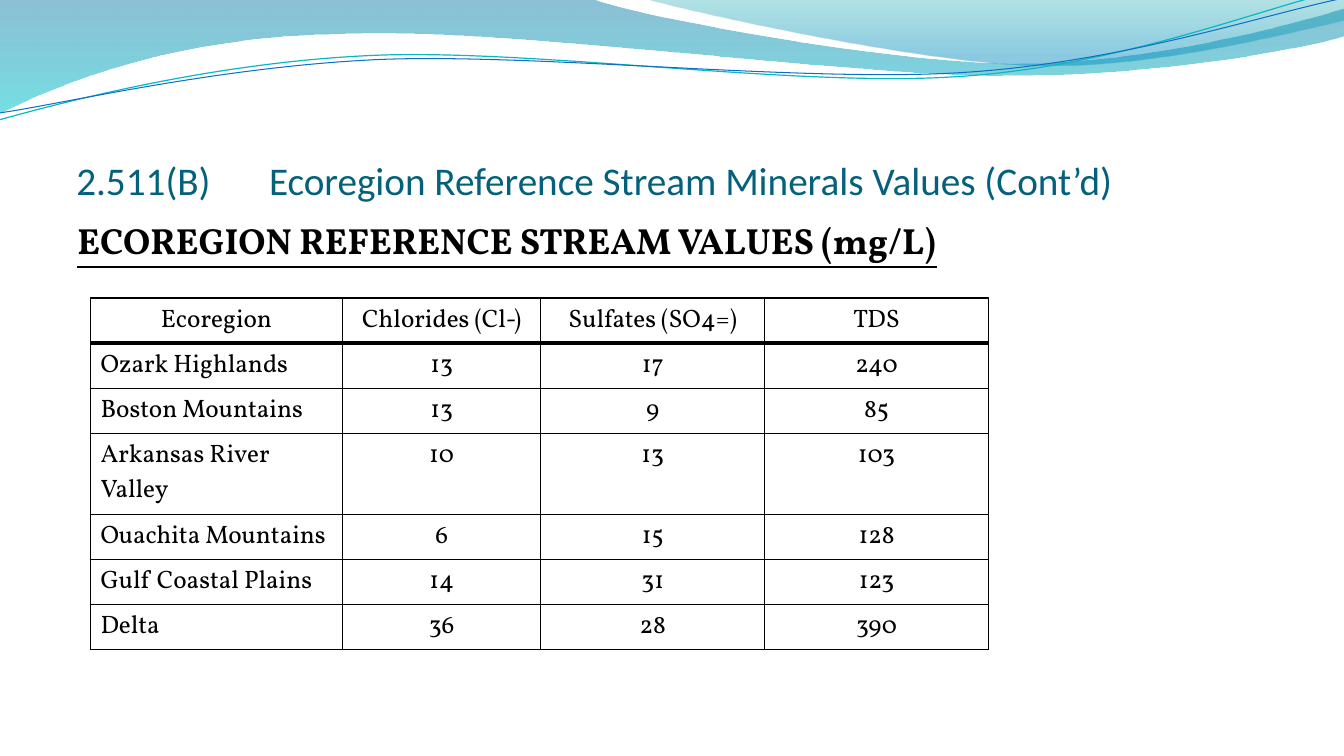
"""Build the slide of ecoregion reference stream mineral values."""
from lxml import etree
from pptx import Presentation
from pptx import util as u
from pptx.dml.color import RGBColor
from pptx.enum import text
from pptx.oxml.ns import qn

BLACK = RGBColor(0x00, 0x00, 0x00)
TITLE_BLUE = RGBColor(0x04, 0x61, 0x7B)
DEEP_BLUE = RGBColor(0x00, 0x74, 0xA1)
CYAN = RGBColor(0x00, 0xC6, 0xCF)
TEAL = RGBColor(0x00, 0xA1, 0xA9)
SKY = RGBColor(0x00, 0x8B, 0xBF)
LINE_TEAL = RGBColor(0x0A, 0xB8, 0xBF)
LINE_BLUE = RGBColor(0x0F, 0x6F, 0xC6)
UNIT = u.Cm(2.54) / 1000


def add_wave(s, segments, close):
    """Draw a freeform from points and cubic curves given in inches."""
    points = [(round(x * 1000), round(y * 1000))
              for seg in segments for x, y in zip(seg[::2], seg[1::2])]
    fb = s.shapes.build_freeform(*points[0], scale=UNIT)
    fb.add_line_segments(points[1:], close=close)
    sp = fb.convert_to_shape()
    sp.shadow.inherit = False
    steps = iter(list(sp.element.iter(qn("a:lnTo"))))
    for seg in segments[1:]:
        step = next(steps)
        if len(seg) == 6:
            curve = etree.Element(qn("a:cubicBezTo"))
            step.addprevious(curve)
            for part in (step, next(steps), next(steps)):
                curve.append(part[0])
                part.getparent().remove(part)
    return sp


def format_text(p, content, fmt):
    """Write one run and set its font from a dict."""
    r = p.add_run()
    r.text = content
    for name, value in fmt.items():
        if name == "color":
            r.font.color.rgb = value
        else:
            setattr(r.font, name, value)


prs = Presentation()
prs.slide_width, prs.slide_height = u.Cm(33.87), u.Cm(19.05)
s = prs.slides.add_slide(prs.slide_layouts[5])
title = s.shapes.title

bands = [
    ([(0, 0), (5.87, -0.01), (6.34, 0.17, 8.85, 0.63, 10.11, 0.63),
      (11.38, 0.63, 12.78, 0.26, 13.33, 0.09), (13.35, 0.36),
      (13.11, 0.44, 11.6, 0.76, 9.94, 0.75), (8.29, 0.75, 5.09, 0.28, 3.43, 0.34),
      (1.72, 0.36, 0.61, 0.83, -0.01, 1.13), (0, 0)],
     [(0, DEEP_BLUE, 45), (1, CYAN, 55)]),
    ([(6.39, -0.01), (6.79, 0.11, 9.09, 0.62, 10.25, 0.65),
      (11.41, 0.69, 12.82, 0.32, 13.33, 0.21), (13.33, 0), (6.39, -0.01)],
     [(0, TEAL, 30), (0.8, SKY, 45)]),
]
for segments, stops in bands:
    sp = add_wave(s, segments, True)
    sp.line.fill.background()
    sp.fill.gradient()
    sp.fill.gradient_angle = 270
    for stop, (position, color, _) in zip(sp.fill.gradient_stops, stops):
        stop.position = position
        stop.color.rgb = color
    for clr, (_, _, opacity) in zip(sp.element.spPr.iter(qn("a:srgbClr")), stops):
        etree.SubElement(clr, qn("a:alpha"), val=str(opacity * 1000))

strands = [
    ([(-0.01, 1.19), (0.64, 1.01, 2.11, 0.62, 3.69, 0.55),
      (5.27, 0.48, 7.9, 0.87, 9.5, 0.76), (11.1, 0.66, 12.52, 0.08, 13.31, -0.1)],
     LINE_TEAL, 0.85),
    ([(0, 1.12), (0.63, 1.03, 2.18, 0.66, 3.78, 0.59),
      (5.37, 0.53, 7.96, 0.82, 9.55, 0.72), (11.15, 0.62, 12.55, 0.14, 13.34, -0.02)],
     LINE_BLUE, 0.75),
]
for segments, color, width in strands:
    sp = add_wave(s, segments, False)
    sp.fill.background()
    sp.line.color.rgb = color
    sp.line.width = u.Pt(width)

title.element.getparent().append(title.element)
title.left, title.top, title.width, title.height = u.Cm(1.7), u.Cm(1.94), u.Cm(30.48), u.Cm(3.18)
tf = title.text_frame
frame = {"margin_left": 0, "margin_right": 0, "margin_top": u.Cm(0.13),
         "margin_bottom": 0, "vertical_anchor": text.MSO_ANCHOR.BOTTOM, "word_wrap": True}
for name, value in frame.items():
    setattr(tf, name, value)
p = tf.paragraphs[0]
p.alignment = text.PP_ALIGN.LEFT
tabs = etree.SubElement(p._p.get_or_add_pPr(), qn("a:tabLst"))
etree.SubElement(tabs, qn("a:tab"), pos=str(u.Cm(5.08)), algn="l")
format_text(p, " 2.511(B)\tEcoregion Reference Stream Minerals Values (Cont’d)",
            {"name": "Calibri", "size": u.Pt(28), "color": TITLE_BLUE})

sp = s.shapes.add_textbox(u.Cm(1.7), u.Cm(5.37), u.Cm(30.48), u.Cm(1.6))
sp.text_frame.word_wrap = True
format_text(sp.text_frame.paragraphs[0], "ECOREGION REFERENCE STREAM VALUES (mg/L)",
            {"name": "Vollkorn", "size": u.Pt(26), "bold": True, "underline": True,
             "color": BLACK})

rows = [
    ("Ecoregion", "Chlorides (Cl-)", "Sulfates (SO4=)", "TDS"),
    ("Ozark Highlands", "13", "17", "240"),
    ("Boston Mountains", "13", "9", "85"),
    ("Arkansas River Valley", "10", "13", "103"),
    ("Ouachita Mountains", "6", "15", "128"),
    ("Gulf Coastal Plains", "14", "31", "123"),
    ("Delta", "36", "28", "390"),
]
widths = [6.35, 5, 5.64, 5.64]
heights = [2.03 if row[0] == "Arkansas River Valley" else 1.14 for row in rows]
table = s.shapes.add_table(len(rows), len(widths), u.Cm(2.28), u.Cm(7.51),
                           u.Cm(sum(widths)), u.Cm(sum(heights))).table
table.first_row = table.horz_banding = False
for column, width in zip(table.columns, widths):
    column.width = u.Cm(width)
for i, row in enumerate(rows):
    table.rows[i].height = u.Cm(heights[i])
    for j, value in enumerate(row):
        cell = table.cell(i, j)
        cell.fill.background()
        p = cell.text_frame.paragraphs[0]
        left = i > 0 and j == 0
        p.alignment = text.PP_ALIGN.LEFT if left else text.PP_ALIGN.CENTER
        format_text(p, value, {"name": "Vollkorn", "size": u.Pt(18), "color": BLACK})
        borders = {"L": 1, "R": 1, "T": 3 if i == 1 else 1, "B": 3 if i == 0 else 1}
        tcPr = cell._tc.get_or_add_tcPr()
        for k, (side, weight) in enumerate(borders.items()):
            ln = etree.Element(qn(f"a:ln{side}"), w=str(u.Pt(weight)))
            fill = etree.SubElement(ln, qn("a:solidFill"))
            etree.SubElement(fill, qn("a:srgbClr"), val=str(BLACK))
            tcPr.insert(k, ln)

prs.save("out.pptx")
